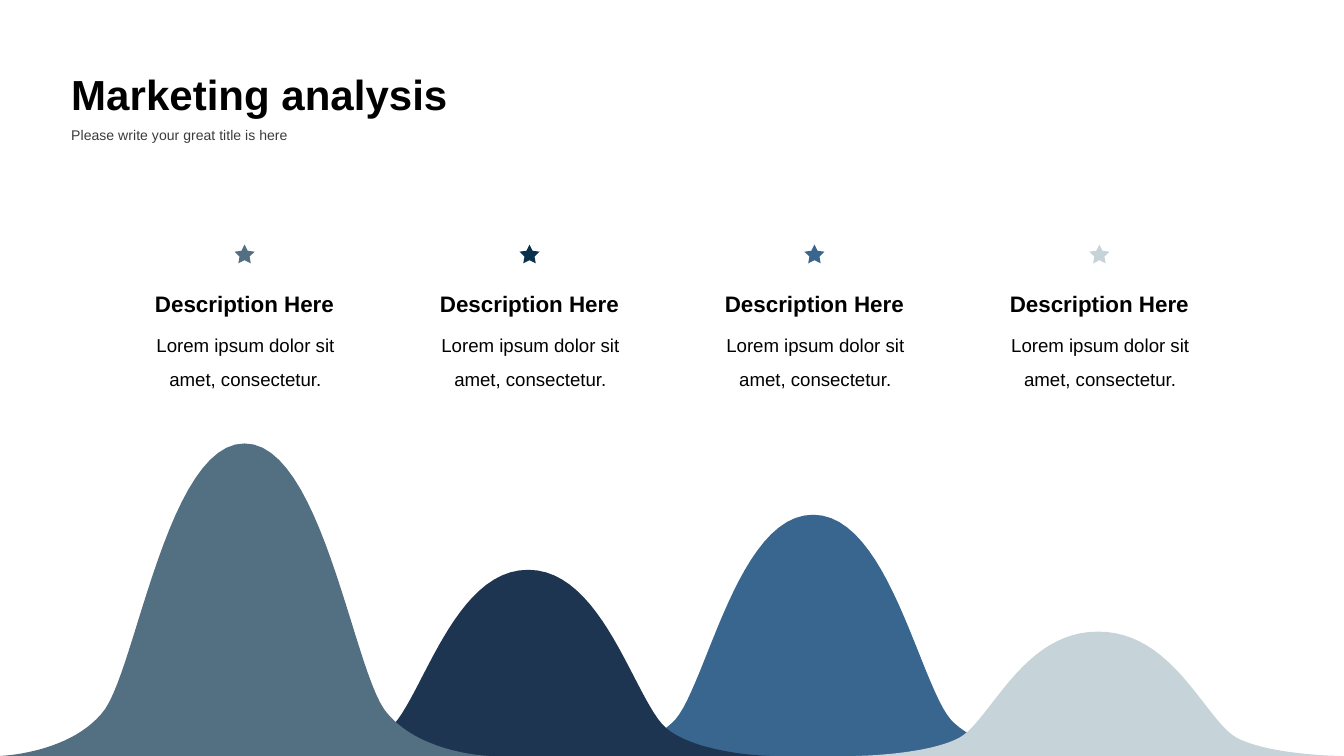
import pptx
import pptx.dml.color
import pptx.enum.shapes
import pptx.enum.text
import pptx.util

Inches = pptx.util.Inches
Align = pptx.enum.text.PP_ALIGN

COLORS = {
    "slate": "536F82",
    "navy": "1E3551",
    "deep": "09314C",
    "blue": "38668E",
    "mist": "C6D3D8",
    "black": "000000",
    "gray": "3C3B3B",
}
WIDTH = 10
BASE = WIDTH * 9 / 16
STEPS = 24
FIRST_CENTER = 1.82
PITCH = 2.12
STAR_WIDTH = 0.15

deck = pptx.Presentation()
deck.slide_width = Inches(WIDTH)
deck.slide_height = Inches(BASE)
page = deck.slides.add_slide(deck.slide_layouts[6])


def add_text(text, left, top, width, height, size, color="black", bold=False,
             align=Align.LEFT, spacing=None):
    box = page.shapes.add_textbox(Inches(left), Inches(top), Inches(width), Inches(height))
    frame = box.text_frame
    frame.word_wrap = True
    frame.auto_size = pptx.enum.text.MSO_AUTO_SIZE.SHAPE_TO_FIT_TEXT
    frame.margin_left = frame.margin_right = Inches(0.05)
    frame.margin_top = frame.margin_bottom = Inches(0.02)
    para = frame.paragraphs[0]
    para.alignment = align
    para.line_spacing = spacing
    span = para.add_run()
    span.text = text
    span.font.name = "Arial"
    span.font.size = pptx.util.Pt(size)
    span.font.bold = bold
    span.font.color.rgb = pptx.dml.color.RGBColor.from_string(COLORS[color])


def paint(shape, color):
    shape.shadow.inherit = False
    shape.fill.solid()
    shape.fill.fore_color.rgb = pptx.dml.color.RGBColor.from_string(COLORS[color])
    shape.line.fill.background()


slope_curves = [
    [(-1, 0), (-0.99, 0), (-0.7, 0.01), (-0.57, 0.15)],
    [(-0.57, 0.15), (-0.44, 0.3), (-0.31, 1), (0, 1)],
]
rise = [(-1, 0)]
for curve in slope_curves:
    for step in range(1, STEPS + 1):
        t = step / STEPS
        weights = ((1 - t) ** 3, 3 * t * (1 - t) ** 2, 3 * t ** 2 * (1 - t), t ** 3)
        rise.append(tuple(
            sum(weight * point[axis] for weight, point in zip(weights, curve))
            for axis in (0, 1)
        ))
profile = rise + [(-x, y) for x, y in reversed(rise[:-1])]

hills = [
    ("blue", 4.25, 3.6, 3.83),
    ("navy", 2.13, 3.6, 4.24),
    ("slate", 0, 3.64, 3.3),
    ("mist", 6.37, 3.6, 4.7),
]
for color, left, width, top in hills:
    points = [
        (Inches(left + width / 2 * (1 + x)), Inches(BASE - (BASE - top) * y))
        for x, y in profile
    ]
    builder = page.shapes.build_freeform(*points[0], scale=1.0)
    builder.add_line_segments(points[1:], close=True)
    paint(builder.convert_to_shape(), color)

for column, color in enumerate(["slate", "deep", "blue", "mist"]):
    center = FIRST_CENTER + PITCH * column
    star = page.shapes.add_shape(
        pptx.enum.shapes.MSO_SHAPE.STAR_5_POINT,
        Inches(center - STAR_WIDTH / 2), Inches(1.82), Inches(STAR_WIDTH), Inches(0.14),
    )
    star.adjustments[0] = 0.25
    paint(star, color)
    add_text("Lorem ipsum dolor sit amet, consectetur.", center - 0.82, 2.38, 1.65, 0.47,
             size=10, align=Align.CENTER, spacing=1.5)
    add_text("Description Here", center - 0.76, 2.14, 1.52, 0.25,
             size=12, bold=True, align=Align.CENTER)

add_text("Marketing analysis", 0.48, 0.49, 3.52, 0.43, size=22.5, bold=True)
add_text("Please write your great title is here", 0.48, 0.92, 2.31, 0.18, size=7.5, color="gray")

deck.save("out.pptx")
